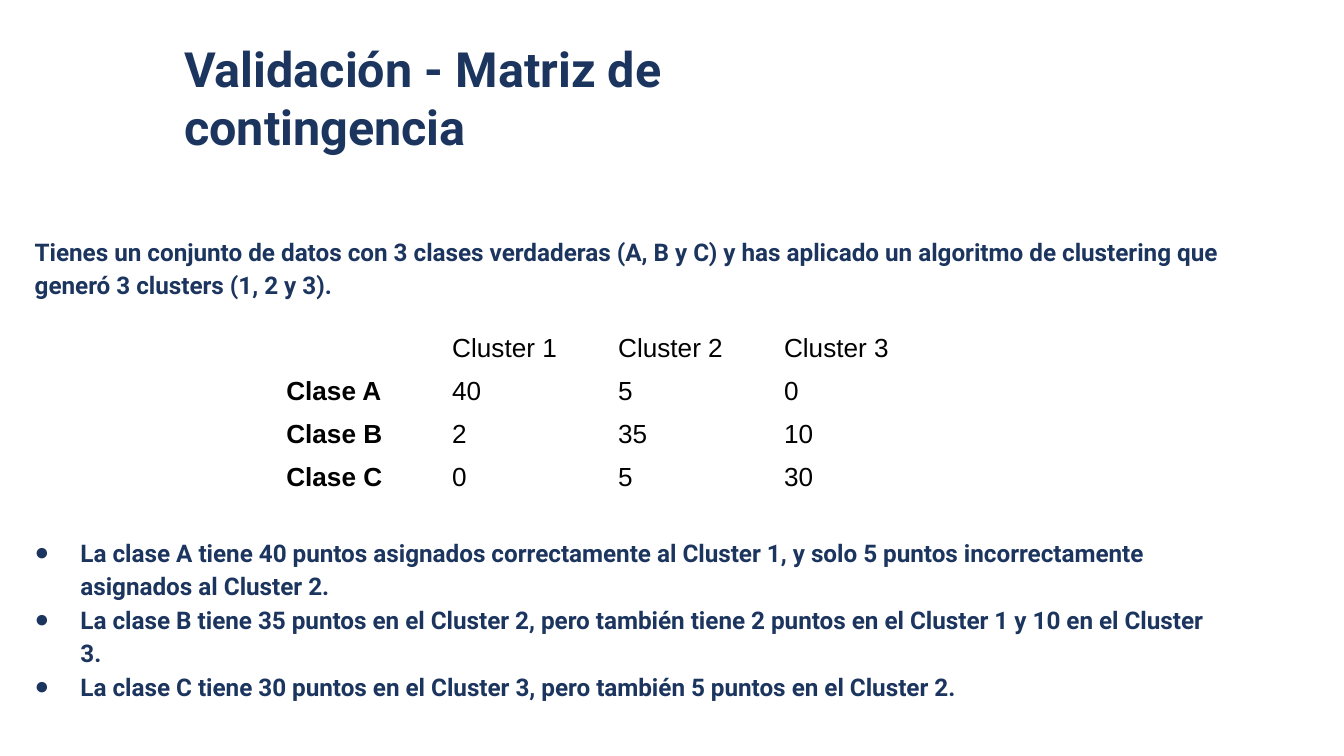
from lxml.etree import SubElement
from pptx import Presentation
from pptx.dml.color import RGBColor
from pptx.enum.text import MSO_ANCHOR, MSO_AUTO_SIZE, PP_ALIGN
from pptx.oxml.ns import qn
from pptx.util import Pt

PX = 4572
COLORS = {"navy": "1C355E", "black": "000000"}

TITLE = "Validación - Matriz de contingencia"
INTRO = (
    "Tienes un conjunto de datos con 3 clases verdaderas (A, B y C) y has aplicado "
    "un algoritmo de clustering que generó 3 clusters (1, 2 y 3)."
)
BULLETS = [
    "La clase A tiene 40 puntos asignados correctamente al Cluster 1, y solo 5 puntos "
    "incorrectamente asignados al Cluster 2.",
    "La clase B tiene 35 puntos en el Cluster 2, pero también tiene 2 puntos en el "
    "Cluster 1 y 10 en el Cluster 3.",
    "La clase C tiene 30 puntos en el Cluster 3, pero también 5 puntos en el Cluster 2.",
]
MATRIX = [
    ["", "Cluster 1", "Cluster 2", "Cluster 3"],
    ["Clase A", "40", "5", "0"],
    ["Clase B", "2", "35", "10"],
    ["Clase C", "0", "5", "30"],
]


def px(*values):
    return [value * PX for value in values]


def add_run(p, text, size, font, color, bold):
    r = p.add_run()
    r.text = text
    r.font.size = Pt(size)
    r.font.name = font
    r.font.bold = bold
    r.font.color.rgb = RGBColor.from_string(COLORS[color])


def set_frame(tf):
    tf.word_wrap = True
    tf.auto_size = MSO_AUTO_SIZE.NONE
    tf.vertical_anchor = MSO_ANCHOR.TOP
    tf.margin_left = tf.margin_right = tf.margin_top = tf.margin_bottom = 20 * PX


def set_indent(p, left, hanging=0):
    pPr = p._p.get_or_add_pPr()
    pPr.set("marL", str(left * PX))
    pPr.set("indent", str(-hanging * PX))


def add_bullet(p):
    pPr = p._p.get_or_add_pPr()
    color = SubElement(pPr, qn("a:buClr"))
    SubElement(color, qn("a:srgbClr")).set("val", COLORS["navy"])
    SubElement(pPr, qn("a:buFont")).set("typeface", "Arial")
    SubElement(pPr, qn("a:buChar")).set("char", "●")


def add_title(s):
    sp = s.shapes.title
    sp.left, sp.top, sp.width, sp.height = px(254, 38, 1182, 224)
    tf = sp.text_frame
    set_frame(tf)
    p = tf.paragraphs[0]
    p.alignment = PP_ALIGN.LEFT
    add_run(p, TITLE, 26, "Roboto", "navy", True)


def add_body(s):
    tf = s.shapes.add_textbox(*px(0, 326, 1838, 812)).text_frame
    set_frame(tf)
    for i, text in enumerate([INTRO, *BULLETS]):
        p = tf.add_paragraph() if i else tf.paragraphs[0]
        p.line_spacing = 1.15
        if i:
            set_indent(p, 100, 68)
            add_bullet(p)
        else:
            set_indent(p, 32)
            p.space_after = Pt(125.5)
        add_run(p, text, 13, "Roboto", "navy", True)


def add_matrix(s):
    rows, cols = len(MATRIX), len(MATRIX[0])
    table = s.shapes.add_table(rows, cols, *px(406, 487, 247 * cols, 64 * rows)).table
    table.first_row = table.horz_banding = False
    for i, values in enumerate(MATRIX):
        for j, text in enumerate(values):
            cell = table.cell(i, j)
            cell.fill.background()
            cell.vertical_anchor = MSO_ANCHOR.MIDDLE
            cell.margin_top = cell.margin_bottom = 0
            if text:
                add_run(cell.text_frame.paragraphs[0], text, 14, "Arial", "black", j == 0)


def main():
    prs = Presentation()
    prs.slide_width, prs.slide_height = px(2000, 1125)
    s = prs.slides.add_slide(prs.slide_layouts[5])
    add_title(s)
    add_body(s)
    add_matrix(s)
    prs.save("out.pptx")


if __name__ == "__main__":
    main()
